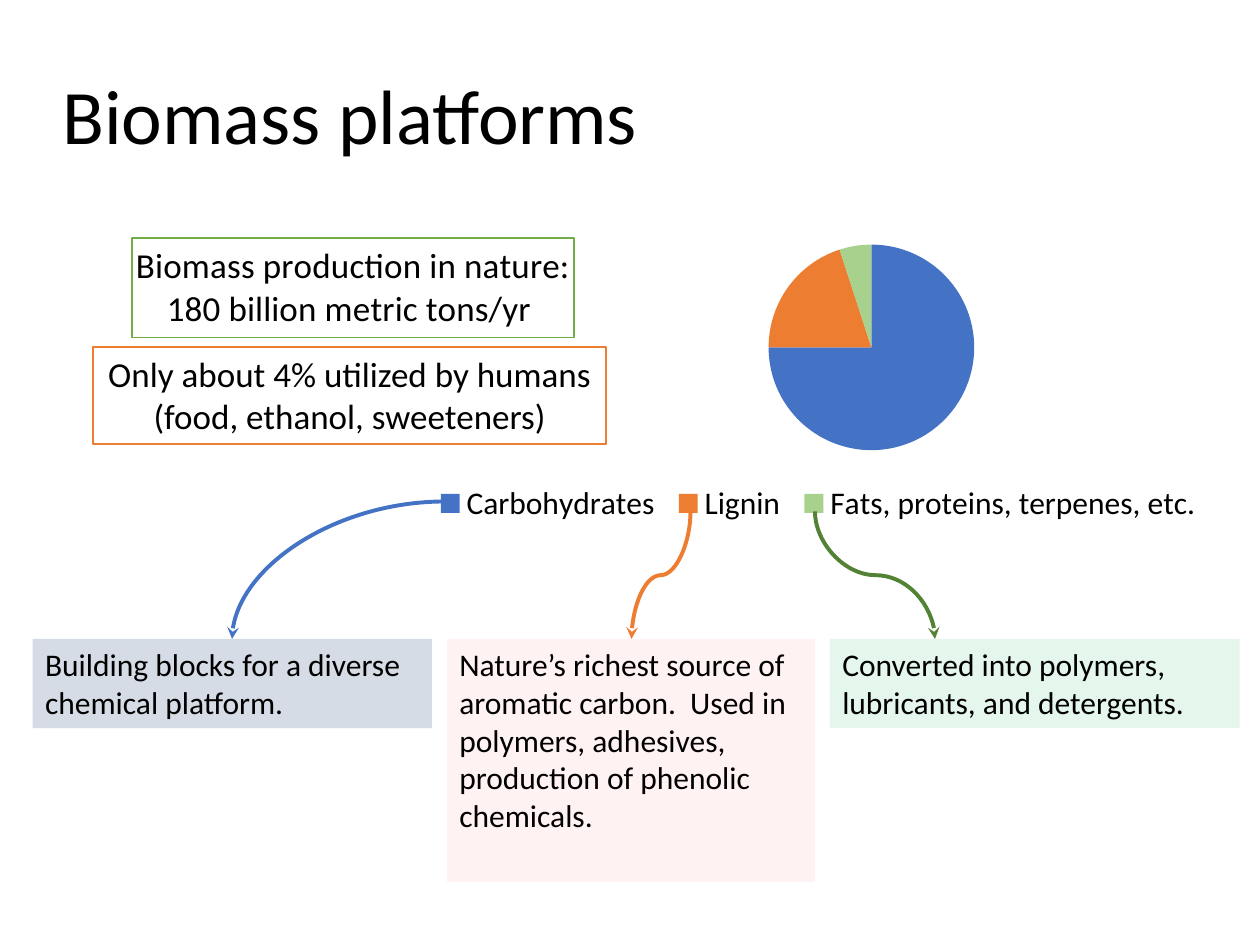
from dataclasses import dataclass

from lxml import etree
from pptx import Presentation
from pptx.chart.data import CategoryChartData
from pptx.dml.color import RGBColor
from pptx.enum.chart import XL_CHART_TYPE, XL_LEGEND_POSITION
from pptx.enum.shapes import MSO_CONNECTOR, MSO_SHAPE
from pptx.enum.text import MSO_ANCHOR, PP_ALIGN
from pptx.oxml.ns import qn
from pptx.util import Cm, Pt

PIE, BOTTOM = XL_CHART_TYPE.PIE, XL_LEGEND_POSITION.BOTTOM
CURVE, RECT = MSO_CONNECTOR.CURVE, MSO_SHAPE.RECTANGLE
LEFT, CENTER = PP_ALIGN.LEFT, PP_ALIGN.CENTER
MIDDLE, TOP = MSO_ANCHOR.MIDDLE, MSO_ANCHOR.TOP


@dataclass(frozen=True)
class Theme:
    """Fonts, type sizes and colours of the slide."""
    font: str = "Calibri"
    title: int = 44
    fact: int = 20
    body: int = 18
    ink: str = "000000"
    paper: str = "FFFFFF"
    blue: str = "4472C4"
    orange: str = "ED7D31"
    light_green: str = "A9D18E"
    green: str = "70AD47"
    dark_green: str = "548235"
    blue_tint: str = "D6DCE5"
    red: str = "FF0000"
    emerald: str = "00B050"


THEME = Theme()


def rgb(value):
    """Turn a hex string into a colour."""
    return RGBColor.from_string(value)


def style_font(font, size):
    """Apply the theme face and ink at a size."""
    font.name, font.size, font.bold = THEME.font, Pt(size), False
    font.color.rgb = rgb(THEME.ink)


def write(tf, text, size, align=LEFT):
    """Fill a text frame and format its runs."""
    tf.text = text
    for p in tf.paragraphs:
        p.alignment = align
        for r in p.runs:
            style_font(r.font, size)


def fill_solid(target, color, opacity=100):
    """Fill a shape with a colour at an opacity in percent."""
    target.fill.solid()
    target.fill.fore_color.rgb = rgb(color)
    if opacity < 100:
        clr = target.fill._xPr.find(".//" + qn("a:srgbClr"))
        etree.SubElement(clr, qn("a:alpha")).set("val", str(opacity * 1000))


def set_layout(parent, index, **fractions):
    """Place a chart part by fractions of the chart area."""
    for old in parent.findall(qn("c:layout")):
        parent.remove(old)
    layout = etree.Element(qn("c:layout"))
    manual = etree.SubElement(layout, qn("c:manualLayout"))
    if "w" in fractions and parent.tag == qn("c:plotArea"):
        etree.SubElement(manual, qn("c:layoutTarget")).set("val", "inner")
    for key in "xy":
        etree.SubElement(manual, qn(f"c:{key}Mode")).set("val", "edge")
    for key, value in fractions.items():
        etree.SubElement(manual, qn(f"c:{key}")).set("val", str(value))
    parent.insert(index, layout)


def add_title(slide, x, y, w, h):
    """Place and format the slide title."""
    sp = slide.shapes.title
    sp.left, sp.top, sp.width, sp.height = Cm(x), Cm(y), Cm(w), Cm(h)
    tf = sp.text_frame
    write(tf, "Biomass platforms", THEME.title)
    tf.vertical_anchor = MIDDLE
    p = tf.paragraphs[0]
    p.line_spacing = 0.9
    p._p.get_or_add_pPr().set("marL", str(Cm(1)))


def add_pie(slide, x, y, w, h):
    """Add the biomass pie with its framed title and legend."""
    data = CategoryChartData()
    data.categories = ["Carbohydrates", "Lignin", "Fats, proteins, terpenes, etc."]
    data.add_series("Series 1", (75, 20, 5))
    chart = slide.shapes.add_chart(PIE, Cm(x), Cm(y), Cm(w), Cm(h), data).chart
    style_font(chart.font, THEME.body)

    title = chart.chart_title
    write(title.text_frame,
          "Biomass production in nature:\n180 billion metric tons/yr ",
          THEME.fact, CENTER)
    title.include_in_layout = False
    title.format.line.color.rgb = rgb(THEME.green)
    title.format.line.width = Pt(1)
    set_layout(title._element, 1, x=0.04, y=0.037)

    chart.has_legend = True
    legend = chart.legend
    legend.position = BOTTOM
    legend.include_in_layout = False
    style_font(legend.font, THEME.body)
    set_layout(legend._element, 1, x=0.3, y=0.76, w=0.69, h=0.12)

    plot = chart.plots[0]
    plot.vary_by_categories = True
    set_layout(plot._element.getparent(), 0, x=0.422, y=0.056, w=0.54, h=0.607)
    for i, color in enumerate((THEME.blue, THEME.orange, THEME.light_green)):
        fill_solid(plot.series[0].points[i].format, color)


def add_box(slide, x, y, w, h, text, size, fill, opacity=100):
    """Add a borderless filled text rectangle."""
    sp = slide.shapes.add_shape(RECT, Cm(x), Cm(y), Cm(w), Cm(h))
    sp.shadow.inherit = False
    fill_solid(sp, fill, opacity)
    sp.line.fill.background()
    sp.text_frame.word_wrap = True
    sp.text_frame.vertical_anchor = TOP
    write(sp.text_frame, text, size)
    return sp


def add_usage(slide, x, y, w, h):
    """Add the outlined note on human use."""
    text = "Only about 4% utilized by humans\n(food, ethanol, sweeteners)"
    sp = add_box(slide, x, y, w, h, text, THEME.fact, THEME.paper)
    sp.text_frame.word_wrap = False
    sp.line.color.rgb = rgb(THEME.orange)
    sp.line.width = Pt(1)
    for p in sp.text_frame.paragraphs:
        p.alignment = CENTER


def add_uses(slide, x, y, gap):
    """Add the row of boxes telling what each fraction is used for."""
    boxes = (
        (8.05, 1.8, "Building blocks for a diverse chemical platform.",
         THEME.blue_tint, 100),
        (7.42, 4.9, "Nature’s richest source of aromatic carbon.  Used in polymers, "
         "adhesives, production of phenolic chemicals.", THEME.red, 5),
        (8.26, 1.8, "Converted into polymers, lubricants, and detergents.",
         THEME.emerald, 10),
    )
    for w, h, text, fill, opacity in boxes:
        add_box(slide, x, y, w, h, text, THEME.body, fill, opacity)
        x += w + gap


def add_curve(slide, x1, y1, x2, y2, color, s_shaped=True):
    """Add a curved arrow, leaving downwards when it is S-shaped."""
    dx, dy = x2 - x1, y2 - y1
    if s_shaped:
        cx, cy = (x1 + x2) / 2, (y1 + y2) / 2
        left, top = cx - dy / 2, cy - abs(dx) / 2
        right, bottom = cx + dy / 2, cy + abs(dx) / 2
        if dx > 0:
            left, right = right, left
        ends = (left, top, right, bottom)
    else:
        ends = (x1, y1, x2, y2)
    line = slide.shapes.add_connector(CURVE, *(Cm(v) for v in ends))
    props = line._element.spPr
    if s_shaped:
        angle = 270 if dx > 0 else 90
        props.find(qn("a:xfrm")).set("rot", str(angle * 60000))
    else:
        props.find(qn("a:prstGeom")).set("prst", "curvedConnector2")
    line.line.color.rgb = rgb(color)
    line.line.width = Pt(2.25)
    etree.SubElement(props.find(qn("a:ln")), qn("a:tailEnd")).set("type", "stealth")
    etree.SubElement(props, qn("a:effectLst"))


def main():
    """Build the slide and save it."""
    prs = Presentation()
    prs.slide_width, prs.slide_height = Cm(25.4), Cm(19.05)
    slide = prs.slides.add_slide(prs.slide_layouts[5])
    add_title(slide, 0, 0.81, 22.86, 3.18)
    add_pie(slide, 1.75, 4.55, 22.86, 6.83)
    add_usage(slide, 1.88, 6.99, 10.34, 1.96)
    row = 12.88
    add_uses(slide, 0.66, row, 0.3)
    add_curve(slide, 8.97, 10.11, 4.68, row, THEME.blue, s_shaped=False)
    add_curve(slide, 13.92, 10.31, 12.73, row, THEME.orange)
    add_curve(slide, 16.43, 10.31, 18.85, row, THEME.dark_green)
    prs.save("out.pptx")


if __name__ == "__main__":
    main()
